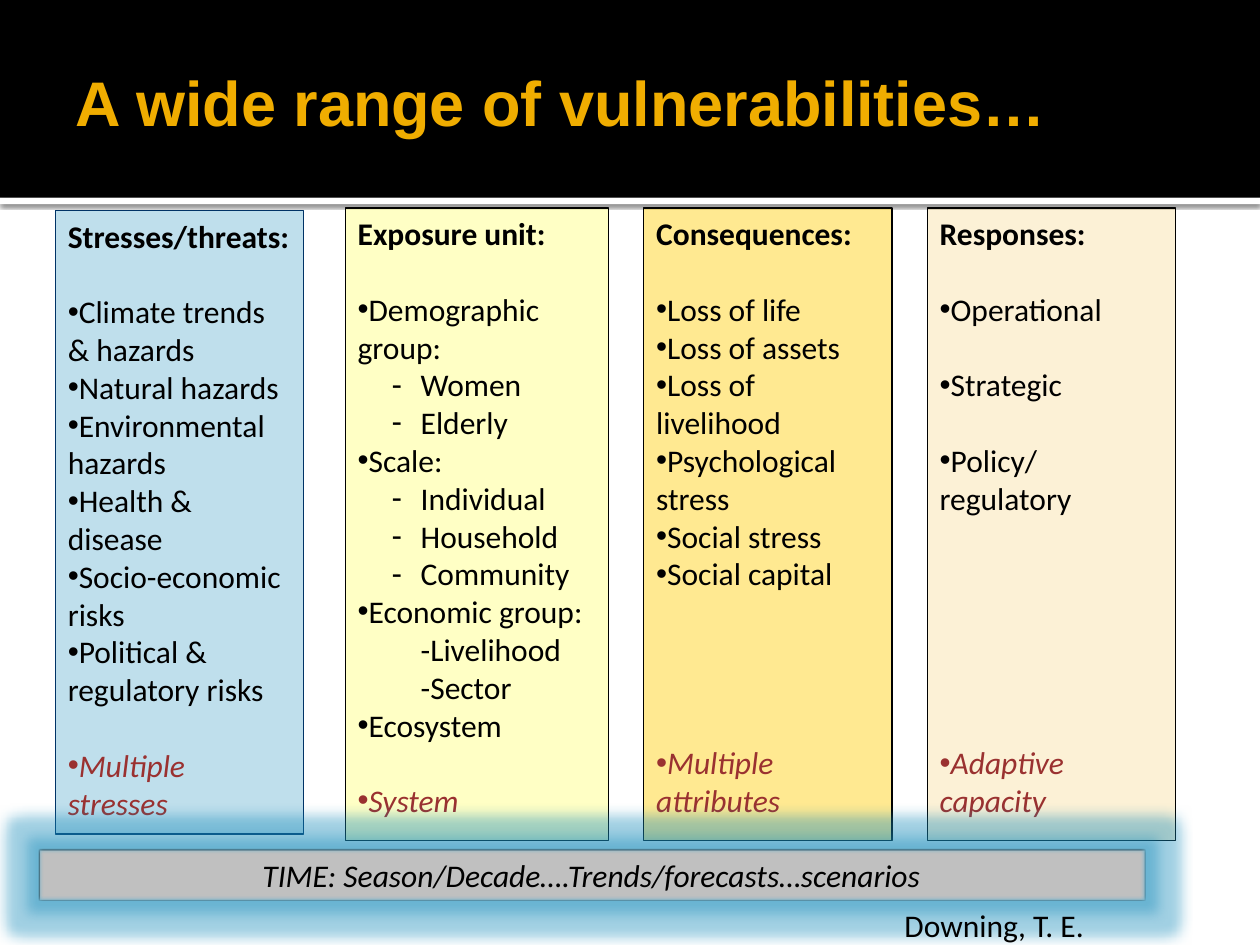
from dataclasses import dataclass

from lxml import etree
from pptx import Presentation
from pptx import util as u
from pptx.dml.color import RGBColor
from pptx.enum import shapes, text
from pptx.oxml.ns import qn

BODY_SIZE = 18
LINE_HEIGHT = 21.6  # points taken by one line of body text
BLACK, WHITE, ACCENT = "000000", "FFFFFF", "9A3130"


@dataclass
class Item:
    text: str
    bullet: str = "•"
    indented: bool = False
    lines_before: int = 0
    closing: bool = False


@dataclass
class Column:
    heading: str
    left: float
    top: float
    width: float
    height: float
    fill: str
    opacity: int
    line: str
    items: list[Item]


def dash(label: str) -> Item:
    return Item(label, "-", indented=True)


def plain(label: str) -> Item:
    return Item(label, "", indented=True)


def closing(label: str, lines_before: int = 1) -> Item:
    return Item(label, lines_before=lines_before, closing=True)


COLUMNS = [
    Column("Stresses/threats:", 0.44, 1.67, 1.97, 4.95, "168BBA", 27, "003366", [
        Item("Climate trends & hazards", lines_before=1),
        Item("Natural hazards"),
        Item("Environmental hazards"),
        Item("Health & disease"),
        Item("Socio-economic risks"),
        Item("Political & regulatory risks"),
        closing("Multiple stresses"),
    ]),
    Column("Exposure unit:", 2.74, 1.65, 2.09, 5.02, "FFFF99", 56, BLACK, [
        Item("Demographic\ngroup:", lines_before=1),
        dash("Women"),
        dash("Elderly"),
        Item("Scale:"),
        dash("Individual"),
        dash("Household"),
        dash("Community"),
        Item("Economic group:"),
        plain("-Livelihood"),
        plain("-Sector"),
        Item("Ecosystem"),
        closing("System"),
    ]),
    Column("Consequences:", 5.11, 1.65, 1.97, 5.02, "FFCC00", 43, BLACK, [
        Item("Loss of life", lines_before=1),
        Item("Loss of assets"),
        Item("Loss of livelihood"),
        Item("Psychological stress"),
        Item("Social stress"),
        Item("Social capital"),
        closing("Multiple attributes", 4),
    ]),
    Column("Responses:", 7.36, 1.65, 1.97, 5.02, "F0AD00", 16, BLACK, [
        Item("Operational", lines_before=1),
        Item("Strategic", lines_before=1),
        Item("Policy/\nregulatory", lines_before=1),
        closing("Adaptive capacity", 6),
    ]),
]


def rgb(value: str) -> RGBColor:
    return RGBColor.from_string(value)


def add_child(parent, tag: str, **attributes):
    return etree.SubElement(parent, qn(tag), {k: str(v) for k, v in attributes.items()})


def add_color(parent, value: str, opacity: int) -> None:
    color = add_child(parent, "a:srgbClr", val=value)
    add_child(color, "a:alpha", val=opacity * 1000)


def add_box(page, left: float, top: float, width: float, height: float,
            fill: str, line: str = ""):
    box = page.shapes.add_shape(shapes.MSO_SHAPE.RECTANGLE, u.Inches(left),
                                u.Inches(top), u.Inches(width), u.Inches(height))
    box.shadow.inherit = False
    box.fill.solid()
    box.fill.fore_color.rgb = rgb(fill)
    if line:
        box.line.color.rgb = rgb(line)
        box.line.width = u.Pt(0.75)
    else:
        box.line.fill.background()
    return box


def style(para, color: str = BLACK, bold: bool = False, italic: bool = False,
          align=text.PP_ALIGN.LEFT) -> None:
    para.alignment = align
    para.font.name = "Calibri"
    para.font.size = u.Pt(BODY_SIZE)
    para.font.color.rgb = rgb(color)
    para.font.bold = bold
    para.font.italic = italic


def add_item(frame, item: Item) -> None:
    para = frame.add_paragraph()
    para.text = item.text
    style(para, ACCENT if item.closing else BLACK, italic=item.closing)
    para.space_before = u.Pt(LINE_HEIGHT * item.lines_before)
    properties = para._p.get_or_add_pPr()
    if item.indented:
        para.level = 1
        properties.set("marL", str(u.Inches(0.5)))
        properties.set("indent", str(u.Inches(-0.23 if item.bullet else 0)))
    if item.bullet:
        add_child(properties, "a:buFont", typeface="Arial")
        add_child(properties, "a:buChar", char=item.bullet)


def add_column(page, column: Column) -> None:
    box = add_box(page, column.left, column.top, column.width, column.height,
                  column.fill, column.line)
    color = box.fill._xPr.find(qn("a:solidFill")).find(qn("a:srgbClr"))
    add_child(color, "a:alpha", val=column.opacity * 1000)
    frame = box.text_frame
    frame.word_wrap = True
    frame.vertical_anchor = text.MSO_ANCHOR.TOP
    heading = frame.paragraphs[0]
    heading.text = column.heading
    style(heading, bold=True)
    for item in column.items:
        add_item(frame, item)


def add_header(page) -> None:
    title = page.shapes.title
    # White strip with a shadow, and the black band, both behind the title
    strip = add_box(page, 0, 1.57, 10, 0.05, WHITE)
    shadow = add_child(strip.element.spPr.find(qn("a:effectLst")), "a:outerShdw",
                       blurRad=u.Pt(2.5), dist=u.Pt(0.8), dir=90 * 60000)
    add_color(shadow, BLACK, 60)
    band = add_box(page, 0, 0, 10, 1.57, BLACK)
    for shape in (strip, band):
        title.element.addprevious(shape.element)

    title.left, title.top = u.Inches(0.5), u.Inches(0.35)
    title.width, title.height = u.Inches(8.5), u.Inches(0.9)
    frame = title.text_frame
    frame.text = "A wide range of vulnerabilities…"
    frame.vertical_anchor = text.MSO_ANCHOR.MIDDLE
    para = frame.paragraphs[0]
    para.alignment = text.PP_ALIGN.LEFT
    para.font.name, para.font.size, para.font.bold = "Arial", u.Pt(36), True
    para.font.color.rgb = rgb("F0AD00")


def add_time_bar(page) -> None:
    bar = add_box(page, 0.31, 6.74, 8.77, 0.4, "C0C0C0", BLACK)
    effects = bar.element.spPr.find(qn("a:effectLst"))
    add_color(add_child(effects, "a:glow", rad=u.Inches(0.19)), "168BBA", 40)
    add_child(effects, "a:softEdge", rad=u.Pt(1))
    bar.text_frame.word_wrap = True
    para = bar.text_frame.paragraphs[0]
    para.text = "TIME: Season/Decade….Trends/forecasts…scenarios"
    style(para, italic=True, align=text.PP_ALIGN.CENTER)


def add_credit(page) -> None:
    box = page.shapes.add_textbox(u.Inches(7.08), u.Inches(7.14),
                                  u.Inches(2.92), u.Inches(0.4))
    box.text_frame.word_wrap = True
    para = box.text_frame.paragraphs[0]
    para.text = "Downing, T. E."
    style(para)


def main() -> None:
    deck = Presentation()
    deck.slide_width, deck.slide_height = u.Inches(10), u.Inches(7.5)
    page = deck.slides.add_slide(deck.slide_layouts[5])
    add_header(page)
    for column in COLUMNS:
        add_column(page, column)
    add_time_bar(page)
    add_credit(page)
    deck.save("out.pptx")


if __name__ == "__main__":
    main()
